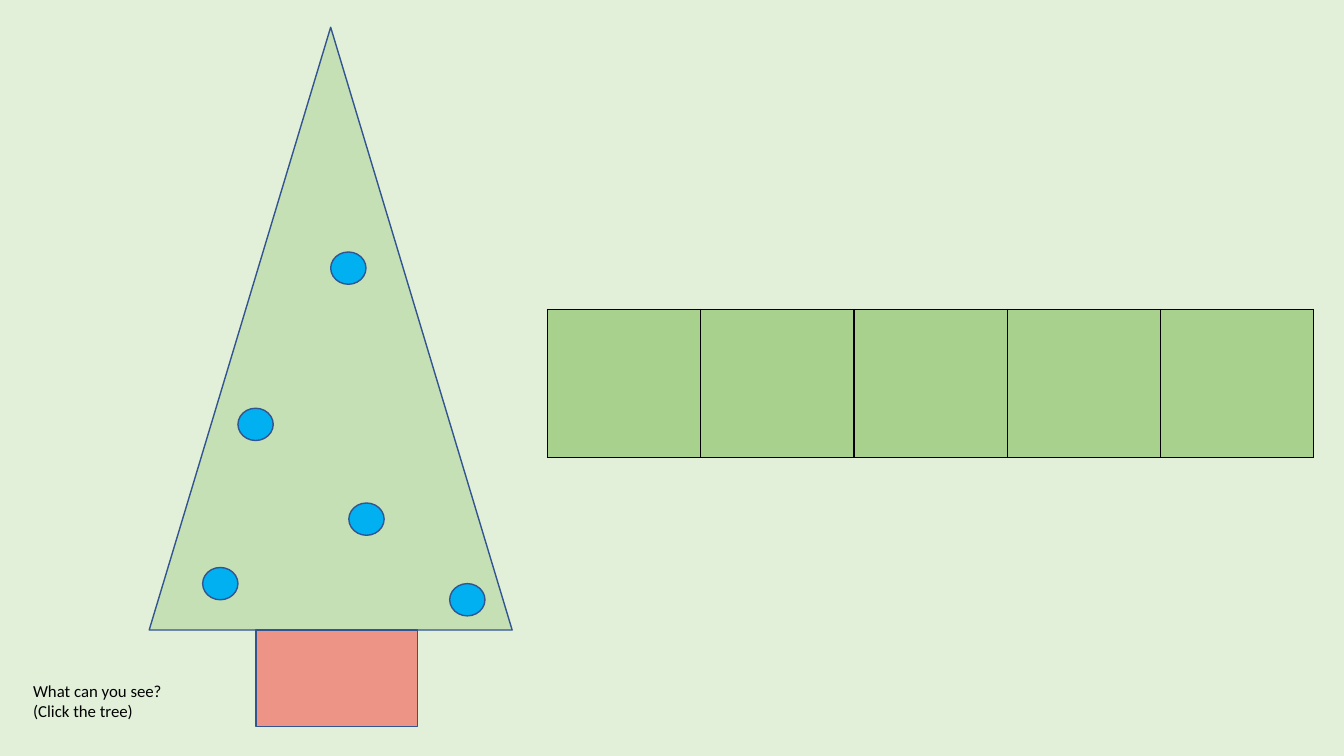
from lxml.etree import SubElement
from pptx import Presentation
from pptx.dml.color import RGBColor
from pptx.enum.shapes import MSO_SHAPE
from pptx.enum.text import MSO_AUTO_SIZE
from pptx.oxml.ns import qn
from pptx.util import Inches, Pt

COLOURS = {
    "background": "E2F0D9",
    "frame": "A9D18E",
    "tree": "C5E0B4",
    "pot": "FF0000",
    "bauble": "00B0F0",
    "outline": "325491",
    "ink": "000000",
}
BAUBLES = [(2.01, 5.63), (2.36, 4.05), (4.46, 5.79), (3.46, 4.99), (3.28, 2.5)]
FRAME_CELLS = 5


def colour(name):
    return RGBColor.from_string(COLOURS[name])


def add_outlined(slide, preset, left, top, width, height, fill, opacity=100):
    figure = slide.shapes.add_shape(
        preset, Inches(left), Inches(top), Inches(width), Inches(height))
    figure.shadow.inherit = False
    figure.fill.solid()
    figure.fill.fore_color.rgb = colour(fill)
    figure.line.color.rgb = colour("outline")
    figure.line.width = Pt(1)
    if opacity < 100:
        tint = figure._element.spPr.find(qn("a:solidFill")).find(qn("a:srgbClr"))
        SubElement(tint, qn("a:alpha"), val=str(opacity * 1000))


def add_cell_borders(cell):
    properties = cell._tc.get_or_add_tcPr()
    for position, side in enumerate(("a:lnL", "a:lnR", "a:lnT", "a:lnB")):
        border = SubElement(properties, qn(side), w=str(Pt(1)))
        properties.insert(position, border)
        stroke = SubElement(border, qn("a:solidFill"))
        SubElement(stroke, qn("a:srgbClr"), val=COLOURS["ink"])


def add_counting_frame(slide, left, top, width, height):
    frame = slide.shapes.add_table(
        1, FRAME_CELLS, Inches(left), Inches(top), Inches(width), Inches(height)).table
    frame.first_row = False
    frame.horz_banding = False
    for column in frame.columns:
        column.width = Inches(width / FRAME_CELLS)
    for cell in frame.iter_cells():
        cell.fill.solid()
        cell.fill.fore_color.rgb = colour("frame")
        add_cell_borders(cell)


def add_text(slide, text, left, top, width, height, size=12, font="Calibri", ink="ink"):
    prompt = slide.shapes.add_textbox(
        Inches(left), Inches(top), Inches(width), Inches(height)).text_frame
    prompt.word_wrap = True
    prompt.auto_size = MSO_AUTO_SIZE.SHAPE_TO_FIT_TEXT
    prompt.text = text
    for paragraph in prompt.paragraphs:
        paragraph.font.size = Pt(size)
        paragraph.font.name = font
        paragraph.font.color.rgb = colour(ink)


def main():
    presentation = Presentation()
    presentation.slide_width = Inches(13.33)
    presentation.slide_height = Inches(7.5)
    slide = presentation.slides.add_slide(presentation.slide_layouts[6])
    slide.background.fill.solid()
    slide.background.fill.fore_color.rgb = colour("background")

    add_counting_frame(slide, 5.43, 3.07, 7.6, 1.47)
    add_outlined(slide, MSO_SHAPE.ISOSCELES_TRIANGLE, 1.48, 0.27, 3.6, 5.98, "tree")
    add_outlined(slide, MSO_SHAPE.RECTANGLE, 2.54, 6.25, 1.6, 0.96, "pot", opacity=38)
    for left, top in BAUBLES:
        add_outlined(slide, MSO_SHAPE.OVAL, left, top, 0.35, 0.32, "bauble")
    add_text(slide, "What can you see?\n(Click the tree)", 0.23, 6.7, 2.5, 0.5)

    presentation.save("out.pptx")


if __name__ == "__main__":
    main()
